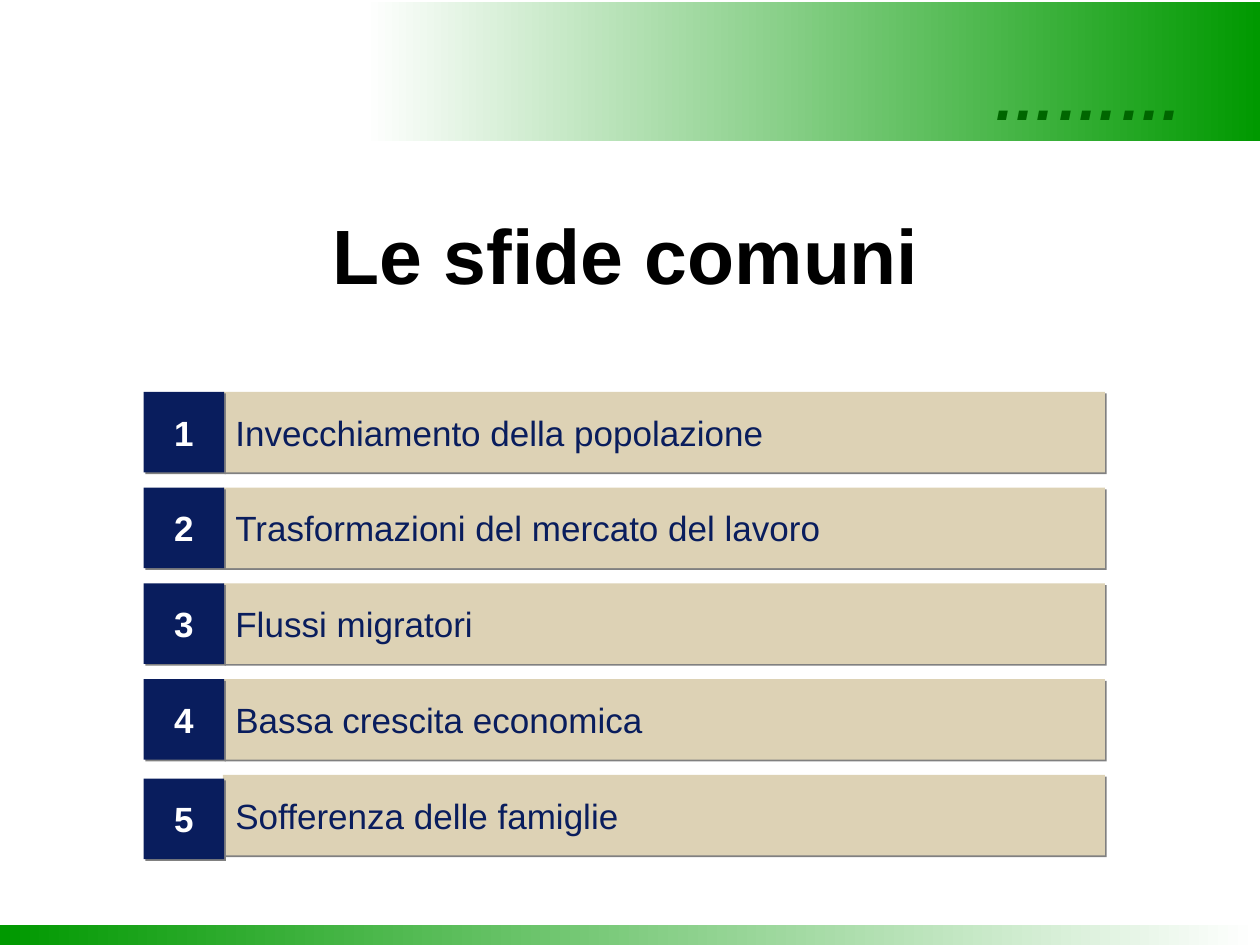
from typing import NamedTuple

from lxml import etree
from pptx import Presentation
from pptx.dml.color import RGBColor
from pptx.enum.shapes import MSO_SHAPE
from pptx.enum.text import MSO_ANCHOR, PP_ALIGN
from pptx.oxml.ns import qn
from pptx.util import Inches, Pt

RECT = MSO_SHAPE.RECTANGLE
TOP, MIDDLE = MSO_ANCHOR.TOP, MSO_ANCHOR.MIDDLE
LEFT, CENTER, RIGHT = PP_ALIGN.LEFT, PP_ALIGN.CENTER, PP_ALIGN.RIGHT

COLORS = {
    "white": "FFFFFF", "green": "009900", "dark_green": "006600",
    "black": "000000", "navy": "091D5D", "sand": "DDD2B5", "gray": "808080",
}
CELL = Inches(0.1)  # the slide is a grid of 100 columns by 75 rows
COLS, ROWS = 100, 75


class Area(NamedTuple):
    """Place on the grid, in columns and rows."""
    col: float
    row: float
    cols: float
    rows: float

    def emu(self) -> list[int]:
        return [round(n * CELL) for n in self]


class TextStyle(NamedTuple):
    size: float
    color: str
    bold: bool = False
    italic: bool = False
    align: PP_ALIGN = LEFT
    anchor: MSO_ANCHOR = TOP
    hanging: float = 0


HEADER = TextStyle(36, "dark_green", bold=True, italic=True, align=RIGHT)
TITLE = TextStyle(44, "black", bold=True, align=CENTER)
ITEM = TextStyle(20, "navy", anchor=MIDDLE, hanging=0.19)
NUMBER = TextStyle(20, "white", bold=True, align=CENTER, anchor=MIDDLE)

CHALLENGES = [
    "Invecchiamento della popolazione",
    "Trasformazioni del mercato del lavoro",
    "Flussi migratori",
    "Bassa crescita economica",
    "Sofferenza delle famiglie",
]
FIRST_ROW, ROW_STEP, BAR_ROWS = 31.1, 7.6, 6.4
NUMBER_COL, BAR_COL, BAR_COLS = 11.4, 17.7, 70
LAST_NUMBER_DROP = 0.3  # the last number sits slightly below its bar


def rgb(name: str) -> RGBColor:
    return RGBColor.from_string(COLORS[name])


def write(sp, text: str, style: TextStyle) -> None:
    tf = sp.text_frame
    frame = {"word_wrap": True, "vertical_anchor": style.anchor}
    frame |= {f"margin_{side}": Inches(0.1) for side in ("left", "top", "right", "bottom")}
    for name, value in frame.items():
        setattr(tf, name, value)
    p = tf.paragraphs[0]
    p.alignment = style.align
    if style.hanging:
        indent = Inches(style.hanging)
        pPr = p._p.get_or_add_pPr()
        pPr.set("marL", str(indent))
        pPr.set("indent", str(-indent))
    r = p.add_run()
    r.text = text
    font = {"name": "Arial", "size": Pt(style.size), "bold": style.bold, "italic": style.italic}
    for name, value in font.items():
        setattr(r.font, name, value)
    r.font.color.rgb = rgb(style.color)


def add_rect(s, area: Area):
    sp = s.shapes.add_shape(RECT, *area.emu())
    sp.shadow.inherit = False
    sp.line.fill.background()
    return sp


def add_gradient_band(s, area: Area, rotation: float = 0) -> None:
    sp = add_rect(s, area)
    sp.rotation = rotation
    sp.fill.gradient()
    sp.fill.gradient_angle = 0
    for stop, color in zip(sp.fill.gradient_stops, ("white", "green")):
        stop.color.rgb = rgb(color)


def add_hard_shadow(sp) -> None:
    """Give the shape a sharp gray shadow towards the lower right."""
    effects = sp._element.spPr.find(qn("a:effectLst"))
    shadow = etree.SubElement(effects, qn("a:outerShdw"), blurRad="0",
                              dist=str(Pt(1.4)), dir=str(45 * 60000),
                              algn="ctr", rotWithShape="0")
    etree.SubElement(shadow, qn("a:srgbClr"), val=COLORS["gray"])


def add_panel(s, area: Area, fill: str, text: str, style: TextStyle) -> None:
    sp = add_rect(s, area)
    sp.fill.solid()
    sp.fill.fore_color.rgb = rgb(fill)
    add_hard_shadow(sp)
    write(sp, text, style)


def add_text(s, area: Area, text: str, style: TextStyle) -> None:
    write(s.shapes.add_textbox(*area.emu()), text, style)


def add_challenge(s, index: int, text: str) -> None:
    row = FIRST_ROW + index * ROW_STEP
    drop = LAST_NUMBER_DROP if index == len(CHALLENGES) - 1 else 0
    add_panel(s, Area(BAR_COL, row, BAR_COLS, BAR_ROWS), "sand", text, ITEM)
    add_panel(s, Area(NUMBER_COL, row + drop, BAR_ROWS, BAR_ROWS), "navy", str(index + 1), NUMBER)


def main() -> None:
    prs = Presentation()
    prs.slide_width, prs.slide_height = COLS * CELL, ROWS * CELL
    s = prs.slides.add_slide(prs.slide_layouts[6])
    add_gradient_band(s, Area(28.9, 0.2, 71.1, 11))
    add_gradient_band(s, Area(0, 73.4, 99.8, 1.6), rotation=180)
    add_text(s, Area(21.6, 3.6, 73.2, 7), "………", HEADER)
    add_text(s, Area(5.1, 15.5, 89.2, 10.8), "Le sfide comuni", TITLE)
    for index, text in enumerate(CHALLENGES):
        add_challenge(s, index, text)
    prs.save("out.pptx")


if __name__ == "__main__":
    main()
